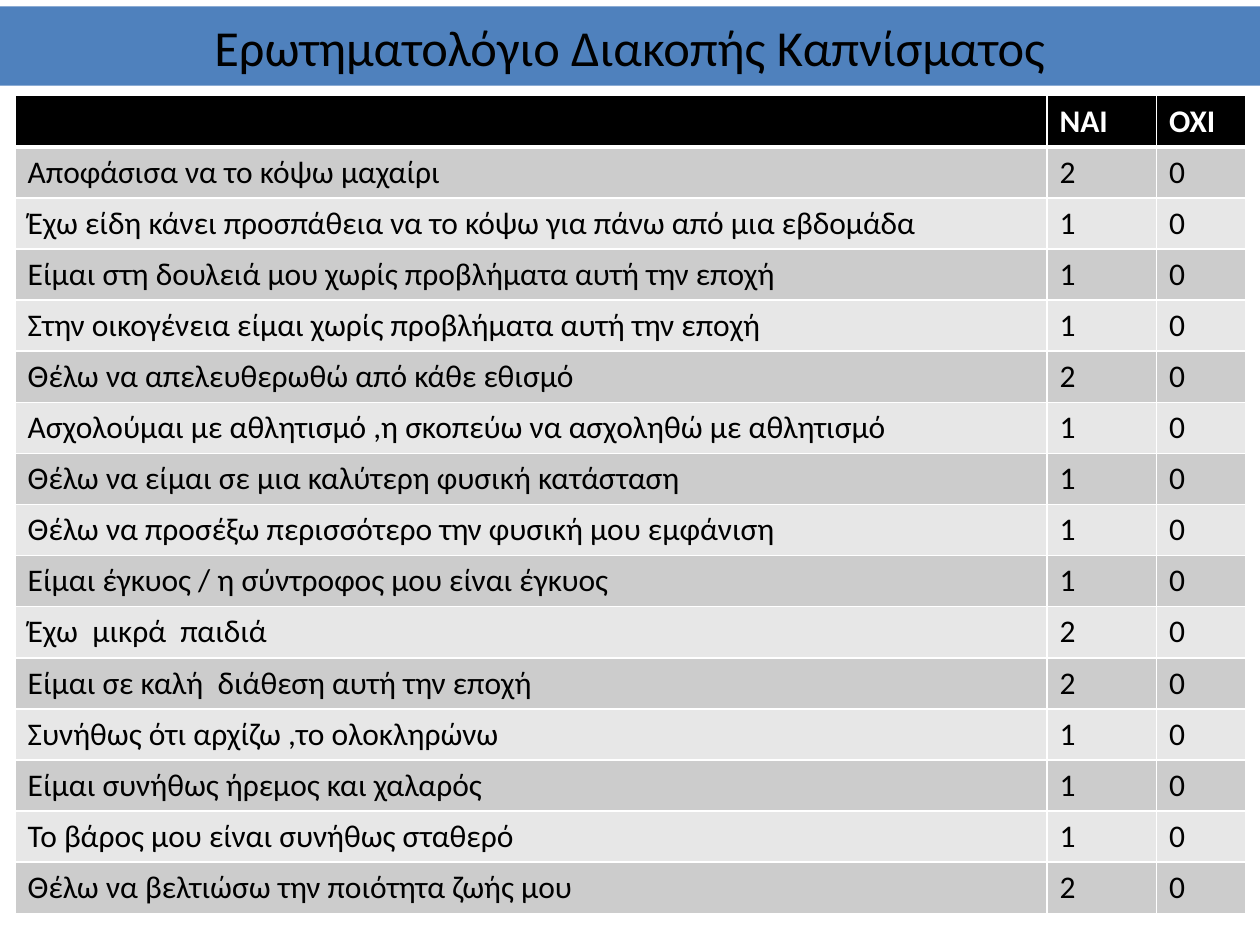
from lxml.etree import SubElement
from pptx import Presentation
from pptx.dml.color import RGBColor
from pptx.enum.shapes import MSO_SHAPE
from pptx.enum.text import MSO_ANCHOR, PP_ALIGN
from pptx.oxml.ns import qn
from pptx.util import Inches, Pt

BLACK = RGBColor(0x00, 0x00, 0x00)
WHITE = RGBColor(0xFF, 0xFF, 0xFF)
BLUE = RGBColor(0x4F, 0x81, 0xBD)
DARK = RGBColor(0xCC, 0xCC, 0xCC)
LIGHT = RGBColor(0xE7, 0xE7, 0xE7)


def put(frame, text, size=18, color=BLACK, bold=False, align=PP_ALIGN.LEFT):
    para = frame.paragraphs[0]
    para.alignment = align
    run = para.add_run()
    run.text = text
    run.font.name = "Calibri"
    run.font.size = Pt(size)
    run.font.bold = bold
    run.font.color.rgb = color


def edge(cell, side, width):
    line = SubElement(cell._tc.get_or_add_tcPr(), qn(f"a:ln{side}"), w=str(Pt(width)))
    fill = SubElement(line, qn("a:solidFill"))
    SubElement(fill, qn("a:srgbClr"), val=str(WHITE))


items = [
    ("Αποφάσισα να το κόψω μαχαίρι", 2),
    ("Έχω είδη κάνει προσπάθεια να το κόψω για πάνω από μια εβδομάδα", 1),
    ("Είμαι στη δουλειά μου χωρίς προβλήματα αυτή την εποχή", 1),
    ("Στην οικογένεια είμαι χωρίς προβλήματα αυτή την εποχή", 1),
    ("Θέλω να απελευθερωθώ από κάθε εθισμό", 2),
    ("Ασχολούμαι με αθλητισμό ,η σκοπεύω να ασχοληθώ με αθλητισμό", 1),
    ("Θέλω να είμαι σε μια καλύτερη φυσική κατάσταση", 1),
    ("Θέλω να προσέξω περισσότερο την φυσική μου εμφάνιση", 1),
    ("Είμαι έγκυος / η σύντροφος μου είναι έγκυος", 1),
    ("Έχω  μικρά  παιδιά", 2),
    ("Είμαι σε καλή  διάθεση αυτή την εποχή", 2),
    ("Συνήθως ότι αρχίζω ,το ολοκληρώνω", 1),
    ("Είμαι συνήθως ήρεμος και χαλαρός", 1),
    ("Το βάρος μου είναι συνήθως σταθερό", 1),
    ("Θέλω να βελτιώσω την ποιότητα ζωής μου", 2),
]
rows = [("", "ΝΑΙ", "ΟΧΙ")] + [(text, str(score), "0") for text, score in items]

deck = Presentation()
deck.slide_width = Inches(10)
deck.slide_height = Inches(7.5)
slide = deck.slides.add_slide(deck.slide_layouts[6])

title = slide.shapes.add_shape(
    MSO_SHAPE.RECTANGLE, Inches(0), Inches(0.05), Inches(10), Inches(0.63))
title.shadow.inherit = False
title.fill.solid()
title.fill.fore_color.rgb = BLUE
title.line.fill.background()
title.text_frame.word_wrap = True
title.text_frame.vertical_anchor = MSO_ANCHOR.MIDDLE
put(title.text_frame, "Ερωτηματολόγιο Διακοπής Καπνίσματος", size=28.8,
    align=PP_ALIGN.CENTER)

high = Inches(6.49)
table = slide.shapes.add_table(
    len(rows), 3, Inches(0.12), Inches(0.76), Inches(9.76), high).table
for col, width in zip(table.columns, (8.19, 0.87, 0.71)):
    col.width = Inches(width)

for r, row in enumerate(rows):
    table.rows[r].height = high // len(rows)
    head = r == 0
    shade = BLACK if head else DARK if r % 2 else LIGHT
    for c, text in enumerate(row):
        cell = table.cell(r, c)
        for side in "LRTB":
            thick = head and side == "B" or r == 1 and side == "T"
            edge(cell, side, 3 if thick else 1)
        cell.fill.solid()
        cell.fill.fore_color.rgb = shade
        if text:
            put(cell.text_frame, text, color=WHITE if head else BLACK, bold=head)

deck.save("out.pptx")
